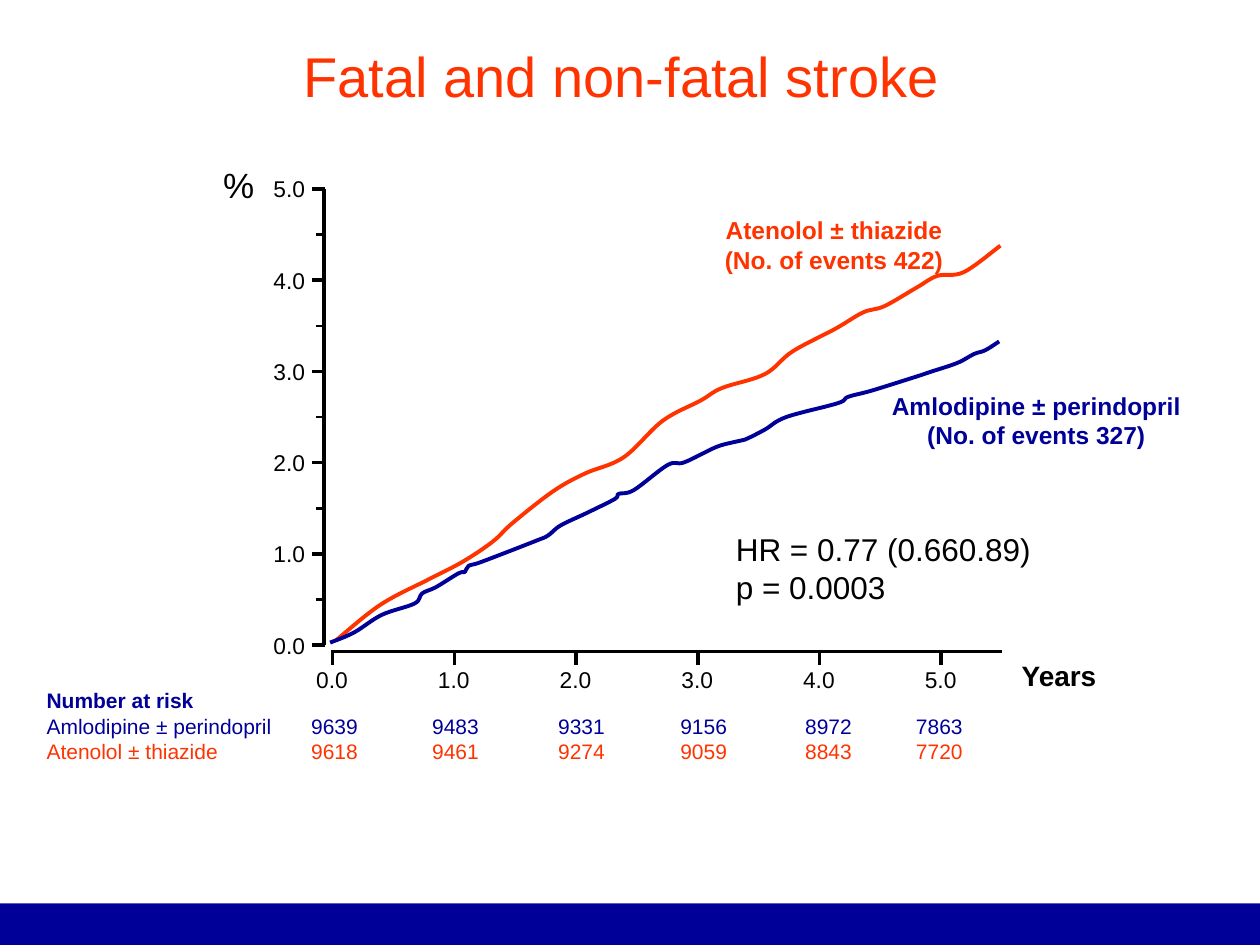
from lxml.etree import SubElement
from pptx import Presentation
from pptx.dml.color import RGBColor
from pptx.enum.shapes import MSO_CONNECTOR, MSO_SHAPE
from pptx.enum.text import MSO_ANCHOR, PP_ALIGN
from pptx.oxml.ns import qn
from pptx.util import Inches, Pt

COLORS = {"black": "000000", "navy": "000099", "orange": "FF3300"}
FONT = "Arial"
RISK_TABS = [2.1, 3.06, 4.06, 5.03, 6.02, 6.9]
RISK_ROWS = [
    ("Number at risk", [], "navy"),
    ("Amlodipine ± perindopril", [9639, 9483, 9331, 9156, 8972, 7863], "navy"),
    ("Atenolol ± thiazide", [9618, 9461, 9274, 9059, 8843, 7720], "orange"),
]
ATENOLOL_CURVE = [
    (1.67, 4.08), (2.02, 3.8), (2.4, 3.6), (2.67, 3.46), (2.91, 3.3), (3.07, 3.15),
    (3.39, 2.9), (3.64, 2.76), (3.95, 2.63), (4.26, 2.34), (4.56, 2.18), (4.73, 2.08),
    (5.07, 1.97), (5.29, 1.79), (5.63, 1.61), (5.85, 1.48), (6.02, 1.43), (6.28, 1.28),
    (6.44, 1.19), (6.65, 1.16), (6.94, 0.95),
]
AMLODIPINE_CURVE = [
    (1.62, 4.1), (1.81, 4.02), (2.03, 3.88), (2.29, 3.79), (2.35, 3.71), (2.46, 3.66),
    (2.64, 3.55), (2.69, 3.54), (2.72, 3.49), (2.82, 3.46), (3.26, 3.29), (3.35, 3.25),
    (3.45, 3.17), (3.66, 3.07), (3.88, 2.96), (3.91, 2.92), (4.03, 2.89), (4.3, 2.69),
    (4.43, 2.67), (4.68, 2.55), (4.82, 2.51), (4.91, 2.49), (5.07, 2.41), (5.24, 2.31),
    (5.65, 2.2), (5.73, 2.15), (5.92, 2.1), (6.27, 1.99), (6.39, 1.95), (6.6, 1.88),
    (6.73, 1.81), (6.82, 1.78), (6.93, 1.71),
]


def color(name):
    """Return the named palette colour."""
    return RGBColor.from_string(COLORS[name])


def format_paragraph(paragraph, size, color_name, bold=False, align=PP_ALIGN.CENTER):
    """Align a paragraph and style its runs."""
    paragraph.alignment = align
    for run in paragraph.runs:
        run.font.name = FONT
        run.font.size = Pt(size)
        run.font.bold = bold
        run.font.color.rgb = color(color_name)


def set_margins(text_frame, margin):
    """Give all four sides of a text frame the same margin."""
    text_frame.margin_left = text_frame.margin_right = Inches(margin)
    text_frame.margin_top = text_frame.margin_bottom = Inches(margin)


def add_label(slide, box, text, size, color_name="black", bold=False,
              align=PP_ALIGN.CENTER):
    """Add an unwrapped text label in a box and return its text frame."""
    text_frame = slide.shapes.add_textbox(*map(Inches, box)).text_frame
    set_margins(text_frame, 0)
    text_frame.word_wrap = False
    text_frame.text = text
    for paragraph in text_frame.paragraphs:
        format_paragraph(paragraph, size, color_name, bold, align)
    return text_frame


def add_line(slide, start, end, width=2):
    """Add a black straight line without a shadow."""
    line = slide.shapes.add_connector(
        MSO_CONNECTOR.STRAIGHT, *map(Inches, (*start, *end)))
    line.line.color.rgb = color("black")
    line.line.width = Pt(width)
    SubElement(line._element.spPr, qn("a:effectLst"))


def smooth_outline(curve):
    """Turn the straight segments of a freeform into Catmull-Rom Bézier segments."""
    knots = [(int(point.get("x")), int(point.get("y")))
             for point in curve._element.iter(qn("a:pt"))]
    padded = [knots[0], *knots, knots[-1]]
    segments = list(curve._element.iter(qn("a:lnTo")))
    for segment, before, start, end, after in zip(
            segments, padded, padded[1:], padded[2:], padded[3:]):
        leaving = [s + (e - b) / 6 for b, s, e in zip(before, start, end)]
        arriving = [e - (a - s) / 6 for s, e, a in zip(start, end, after)]
        outline = segment.getparent()
        bezier = SubElement(outline, qn("a:cubicBezTo"))
        for x, y in (leaving, arriving, end):
            SubElement(bezier, qn("a:pt"), x=str(round(x)), y=str(round(y)))
        outline.replace(segment, bezier)


def add_curve(slide, left, top, knots, color_name):
    """Draw one smooth event curve."""
    points = [(Inches(left + x), Inches(top + y)) for x, y in knots]
    builder = slide.shapes.build_freeform(*points[0])
    builder.add_line_segments(points[1:], close=False)
    curve = builder.convert_to_shape()
    smooth_outline(curve)
    curve.shadow.inherit = False
    curve.fill.background()
    curve.line.color.rgb = color(color_name)
    curve.line.width = Pt(2.25)


def add_footer_bar(slide, left, top, width, height):
    """Draw the solid bar along the bottom edge."""
    bar = slide.shapes.add_shape(
        MSO_SHAPE.RECTANGLE, *map(Inches, (left, top, width, height)))
    bar.shadow.inherit = False
    bar.fill.solid()
    bar.fill.fore_color.rgb = color("navy")
    bar.line.fill.background()


def add_title(slide, left, top, width, height):
    """Place and format the slide title."""
    title = slide.shapes.title
    title.left, title.top = Inches(left), Inches(top)
    title.width, title.height = Inches(width), Inches(height)
    text_frame = title.text_frame
    text_frame.text = "Fatal and non-fatal stroke "
    text_frame.vertical_anchor = MSO_ANCHOR.MIDDLE
    set_margins(text_frame, 0)
    text_frame.paragraphs[0].line_spacing = 0.9
    format_paragraph(text_frame.paragraphs[0], 32, "orange")


def add_risk_rows(slide, left, top, width, height):
    """Write the numbers at risk in tabbed columns."""
    text_frame = slide.shapes.add_textbox(
        *map(Inches, (left, top, width, height))).text_frame
    set_margins(text_frame, 0.02)
    text_frame.word_wrap = True
    text_frame.text = "\n".join(
        "\t".join([name, *map(str, counts)]) for name, counts, _ in RISK_ROWS)
    for paragraph, (_, counts, color_name) in zip(text_frame.paragraphs, RISK_ROWS):
        format_paragraph(paragraph, 12, color_name, not counts, PP_ALIGN.LEFT)
        tab_list = SubElement(paragraph._p.get_or_add_pPr(), qn("a:tabLst"))
        for position in RISK_TABS:
            SubElement(tab_list, qn("a:tab"), pos=str(Inches(position)), algn="l")


def add_axes(slide, left, top, width, height):
    """Draw the percent and year axes with ticks and labels."""
    bottom = top + height
    add_line(slide, (left, top), (left, bottom))
    for index in range(11):
        y = bottom - index * height / 10
        is_major = index % 2 == 0
        add_line(slide, (left + 0.01, y), (left - (0.09 if is_major else 0.06), y),
                 2 if is_major else 1.5)
        if is_major:
            add_label(slide, (left - 0.4, y - 0.11, 0.25, 0.22), f"{index / 2:.1f}", 13)
    base = bottom + 0.05
    add_line(slide, (left + 0.06, base), (left + width, base))
    year_step = (width - 0.55) / 5
    for year in range(6):
        x = left + 0.07 + year * year_step
        add_line(slide, (x, base), (x, base + 0.11))
        add_label(slide, (x - 0.13, base + 0.11, 0.25, 0.22), f"{year:.1f}", 13)


def add_stroke_chart(slide, left, top):
    """Draw the event curves, axes and annotations."""
    add_axes(slide, left + 1.57, top + 0.5, 5.38, 3.62)
    add_label(slide, (left + 7.1, top + 4.23, 0.61, 0.27), "Years", 16, bold=True)
    percent = add_label(slide, (left + 0.65, top + 0.12, 0.49, 0.69), "%", 20)
    percent.vertical_anchor = MSO_ANCHOR.MIDDLE
    add_label(slide, (left + 6.07, top + 2.1, 2.31, 0.47),
              "Amlodipine ± perindopril\n(No. of events 327)", 14, "navy", True)
    add_label(slide, (left + 4.75, top + 0.71, 1.74, 0.47),
              "Atenolol ± thiazide\n(No. of events 422)", 14, "orange", True)
    add_label(slide, (left + 4.84, top + 3.21, 2.36, 0.61),
              "HR = 0.77 (0.660.89)\np = 0.0003", 18, align=PP_ALIGN.LEFT)
    add_curve(slide, left, top, ATENOLOL_CURVE, "orange")
    add_curve(slide, left, top, AMLODIPINE_CURVE, "navy")


def main():
    """Build and save the presentation."""
    presentation = Presentation()
    presentation.slide_width, presentation.slide_height = Inches(10), Inches(7.5)
    slide = presentation.slides.add_slide(presentation.slide_layouts[5])
    add_footer_bar(slide, 0, 7.17, 10, 0.33)
    add_title(slide, 0.84, 0.4, 8.31, 0.46)
    add_risk_rows(slide, 0.35, 5.44, 8.6, 0.64)
    add_stroke_chart(slide, 1, 1)
    presentation.save("out.pptx")


if __name__ == "__main__":
    main()
